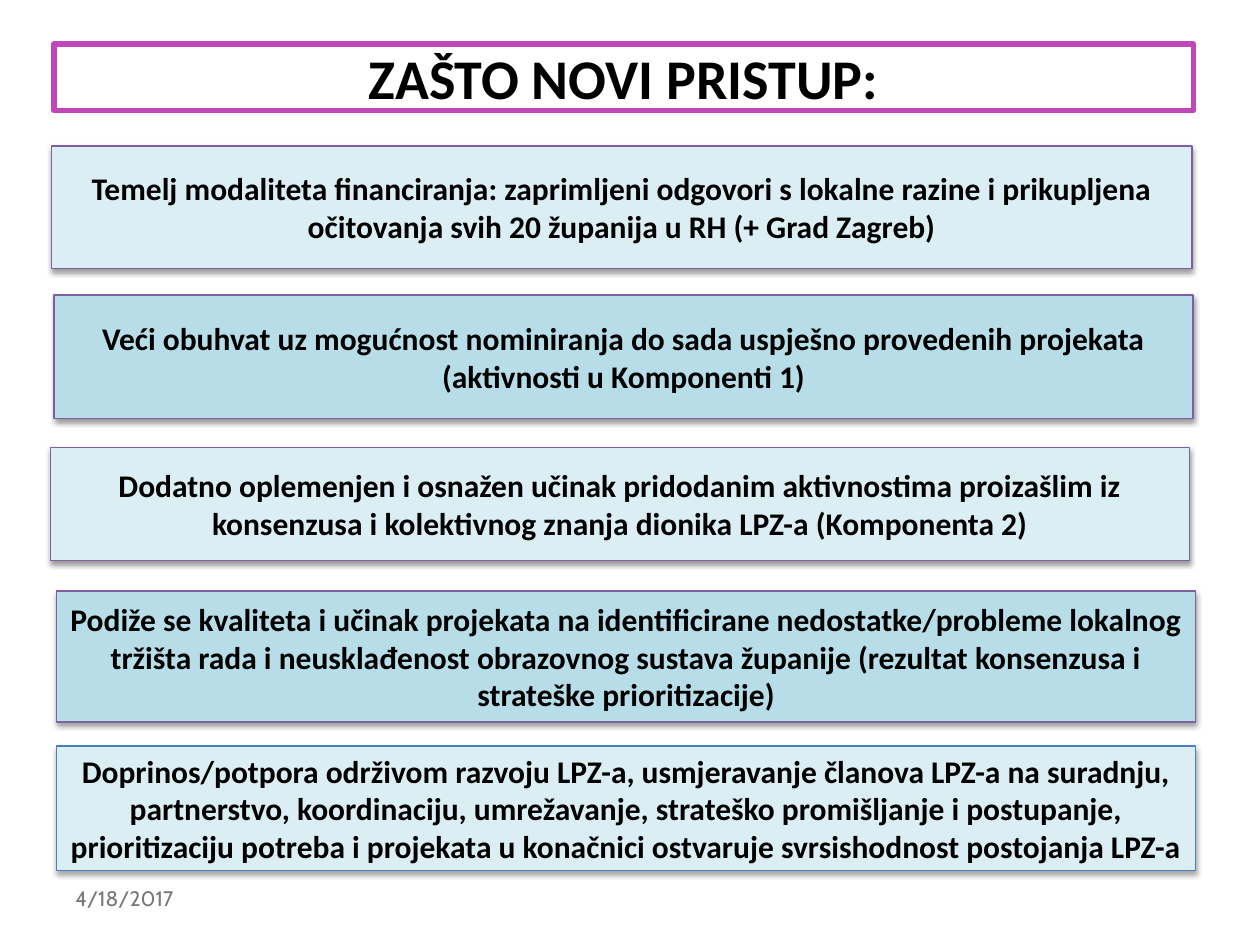
from lxml import etree
from pptx import Presentation
from pptx import util as u
from pptx.dml.color import RGBColor
from pptx.enum import shapes, text
from pptx.oxml import ns

COLOURS = {
    "white": "FFFFFF",
    "black": "000000",
    "magenta": "BF47B9",
    "pale": "DBEEF4",
    "aqua": "B7DEE8",
    "purple": "7D60A0",
    "blue": "4B7EBC",
    "grey": "777877",
}

TITLE = "ZAŠTO NOVI PRISTUP:"
DATE = "4/18/2017"
REASONS = [
    ((0.41, 1.16, 9.05, 0.97), "pale", "purple",
     "Temelj modaliteta financiranja: zaprimljeni odgovori s lokalne razine i "
     "prikupljena očitovanja svih 20 županija u RH (+ Grad Zagreb)"),
    ((0.43, 2.34, 9.04, 0.98), "aqua", "purple",
     "Veći obuhvat uz mogućnost nominiranja do sada uspješno provedenih projekata "
     "(aktivnosti u Komponenti 1)"),
    ((0.40, 3.55, 9.04, 0.90), "pale", "purple",
     "Dodatno oplemenjen i osnažen učinak pridodanim aktivnostima proizašlim iz "
     "konsenzusa i kolektivnog znanja dionika LPZ-a (Komponenta 2)"),
    ((0.45, 4.69, 9.04, 1.04), "aqua", "purple",
     "Podiže se kvaliteta i učinak projekata na identificirane nedostatke/probleme "
     "lokalnog tržišta rada i neusklađenost obrazovnog sustava županije "
     "(rezultat konsenzusa i strateške prioritizacije)"),
    ((0.45, 5.92, 9.04, 0.99), "pale", "blue",
     "Doprinos/potpora održivom razvoju LPZ-a, usmjeravanje članova LPZ-a na suradnju, "
     "partnerstvo, koordinaciju, umrežavanje, strateško promišljanje i postupanje, "
     "prioritizaciju potreba i projekata u konačnici ostvaruje svrsishodnost "
     "postojanja LPZ-a"),
]


def colour(name):
    return RGBColor.from_string(COLOURS[name])


def write(box, words, font, size, ink, bold=False):
    box.text_frame.word_wrap = True
    para = box.text_frame.paragraphs[0]
    para.text = words
    para.font.name = font
    para.font.size = u.Pt(size)
    para.font.bold = bold
    para.font.color.rgb = colour(ink)
    return para


def add_shadow(box, opacity, distance):
    effects = box._element.spPr.find(ns.qn("a:effectLst"))
    shadow = etree.SubElement(
        effects, ns.qn("a:outerShdw"), blurRad=str(u.Pt(3.1)),
        dist=str(u.Pt(distance)), dir="5400000", rotWithShape="0")
    tint = etree.SubElement(shadow, ns.qn("a:srgbClr"), val=COLOURS["black"])
    etree.SubElement(tint, ns.qn("a:alpha"), val=str(opacity * 1000))


def add_panel(page, area, words, fill, line, width, size):
    box = page.shapes.add_shape(shapes.MSO_SHAPE.RECTANGLE, *map(u.Inches, area))
    box.shadow.inherit = False
    box.fill.solid()
    box.fill.fore_color.rgb = colour(fill)
    box.line.color.rgb = colour(line)
    box.line.width = u.Pt(width)
    box.text_frame.vertical_anchor = text.MSO_ANCHOR.MIDDLE
    para = write(box, words, "Calibri", size, "black", bold=True)
    para.alignment = text.PP_ALIGN.CENTER
    return box


def add_title(page, area):
    add_panel(page, area, TITLE, "white", "magenta", 3, 32)


def add_reason(page, area, fill, line, words):
    box = add_panel(page, area, words, fill, line, 0.75, 18)
    opacity, distance = (35, 1.8) if line == "blue" else (38, 1.6)
    add_shadow(box, opacity, distance)


def add_date(page, area):
    box = page.shapes.add_textbox(*map(u.Inches, area))
    write(box, DATE, "Cabin", 12, "grey")


def main():
    deck = Presentation()
    deck.slide_width, deck.slide_height = u.Inches(10), u.Inches(7.5)
    page = deck.slides.add_slide(deck.slide_layouts[6])
    add_date(page, (0.5, 6.98, 2.33, 0.4))
    add_title(page, (0.43, 0.35, 9.04, 0.53))
    for reason in REASONS:
        add_reason(page, *reason)
    deck.save("out.pptx")


if __name__ == "__main__":
    main()
